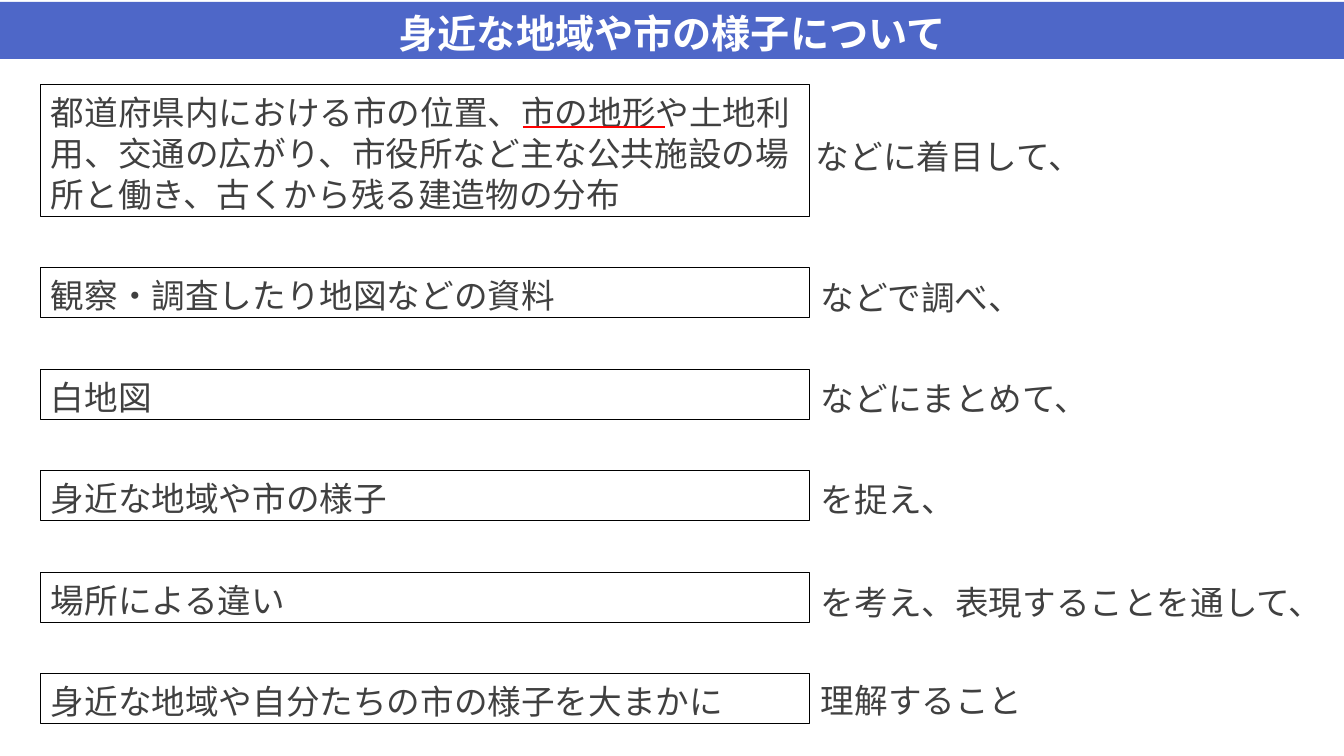
from lxml import etree
from pptx import Presentation
from pptx.dml.color import RGBColor
from pptx.enum.shapes import MSO_CONNECTOR, MSO_SHAPE
from pptx.enum.text import MSO_ANCHOR, PP_ALIGN
from pptx.oxml.ns import qn
from pptx.util import Pt

TITLE = "身近な地域や市の様子について"
FIRST_ANSWER = (
    "都道府県内における市の位置、市の地形や土地利用、交通の広がり、"
    "市役所など主な公共施設の場所と働き、古くから残る建造物の分布"
)
STEPS = [
    ("観察・調査したり地図などの資料", "などで調べ、", 268, 210),
    ("白地図", "などにまとめて、", 369, 273),
    ("身近な地域や市の様子", "を捉え、", 470, 131),
    ("場所による違い", "を考え、表現することを通して、", 573, 513),
    ("身近な地域や自分たちの市の様子を大まかに", "理解すること", 671, 233),
]

FONT = "Noto Sans CJK JP"
WHITE = RGBColor(0xFF, 0xFF, 0xFF)
BLACK = RGBColor(0x00, 0x00, 0x00)
GREY = RGBColor(0x40, 0x40, 0x40)
BLUE = RGBColor(0x4E, 0x67, 0xC8)
RED = RGBColor(0xFF, 0x00, 0x00)
TOP, MIDDLE, BOTTOM = MSO_ANCHOR.TOP, MSO_ANCHOR.MIDDLE, MSO_ANCHOR.BOTTOM
LEFT, CENTER = PP_ALIGN.LEFT, PP_ALIGN.CENTER
RECTANGLE, STRAIGHT = MSO_SHAPE.RECTANGLE, MSO_CONNECTOR.STRAIGHT

PAGE_WIDTH, PAGE_HEIGHT = 1344, 756
BOX_LEFT, BOX_WIDTH, BOX_HEIGHT = 41, 769, 50
LABEL_LEFT, LABEL_HEIGHT = 811, 52
STEP_TOP, STEP_PITCH = 268, 101.5


def px(length):
    return round(length * 914400 / 100.8)


def write(shape, text, size=24, leading=29, color=GREY, bold=False,
          align=LEFT, anchor=TOP, right=10):
    frame = shape.text_frame
    frame.word_wrap = True
    frame.vertical_anchor = anchor
    frame.margin_left, frame.margin_right = px(10), px(right)
    frame.margin_top, frame.margin_bottom = px(7), px(3)
    para = frame.paragraphs[0]
    para.alignment = align
    para.line_spacing = Pt(leading)
    span = para.add_run()
    span.text = text
    span.font.name = FONT
    span.font.size = Pt(size)
    span.font.bold = bold
    span.font.color.rgb = color
    etree.SubElement(span.font._element, qn("a:ea"), typeface=FONT)


def add_box(page, left, top, width, height, fill, line=None):
    box = page.shapes.add_shape(RECTANGLE, px(left), px(top), px(width), px(height))
    box.shadow.inherit = False
    box.fill.solid()
    box.fill.fore_color.rgb = fill
    if line is None:
        box.line.fill.background()
    else:
        box.line.color.rgb = line
        box.line.width = Pt(0.75)
    return box


def add_step(page, answer, label, top, height, label_left, label_top, label_width):
    box = add_box(page, BOX_LEFT, top, BOX_WIDTH, height, WHITE, BLACK)
    write(box, answer)
    caption = page.shapes.add_textbox(
        px(label_left), px(label_top), px(label_width), px(LABEL_HEIGHT))
    write(caption, label, anchor=BOTTOM, right=0)


def main():
    deck = Presentation()
    deck.slide_width, deck.slide_height = px(PAGE_WIDTH), px(PAGE_HEIGHT)
    page = deck.slides.add_slide(deck.slide_layouts[6])

    add_step(page, FIRST_ANSWER, "などに着目して、", 85, 132, 806, 127, 272)
    for row, (answer, label, label_top, label_width) in enumerate(STEPS):
        top = STEP_TOP + row * STEP_PITCH
        add_step(page, answer, label, top, BOX_HEIGHT,
                 LABEL_LEFT, label_top, label_width)

    underline = page.shapes.add_connector(STRAIGHT, px(523), px(127), px(665), px(127))
    underline.line.color.rgb = RED
    underline.line.width = Pt(2)
    etree.SubElement(underline._element.spPr, qn("a:effectLst"))

    banner = add_box(page, 0, 2, PAGE_WIDTH, 57, BLUE)
    write(banner, TITLE, size=28, leading=34, color=WHITE, bold=True,
          align=CENTER, anchor=MIDDLE)
    deck.save("out.pptx")


if __name__ == "__main__":
    main()
